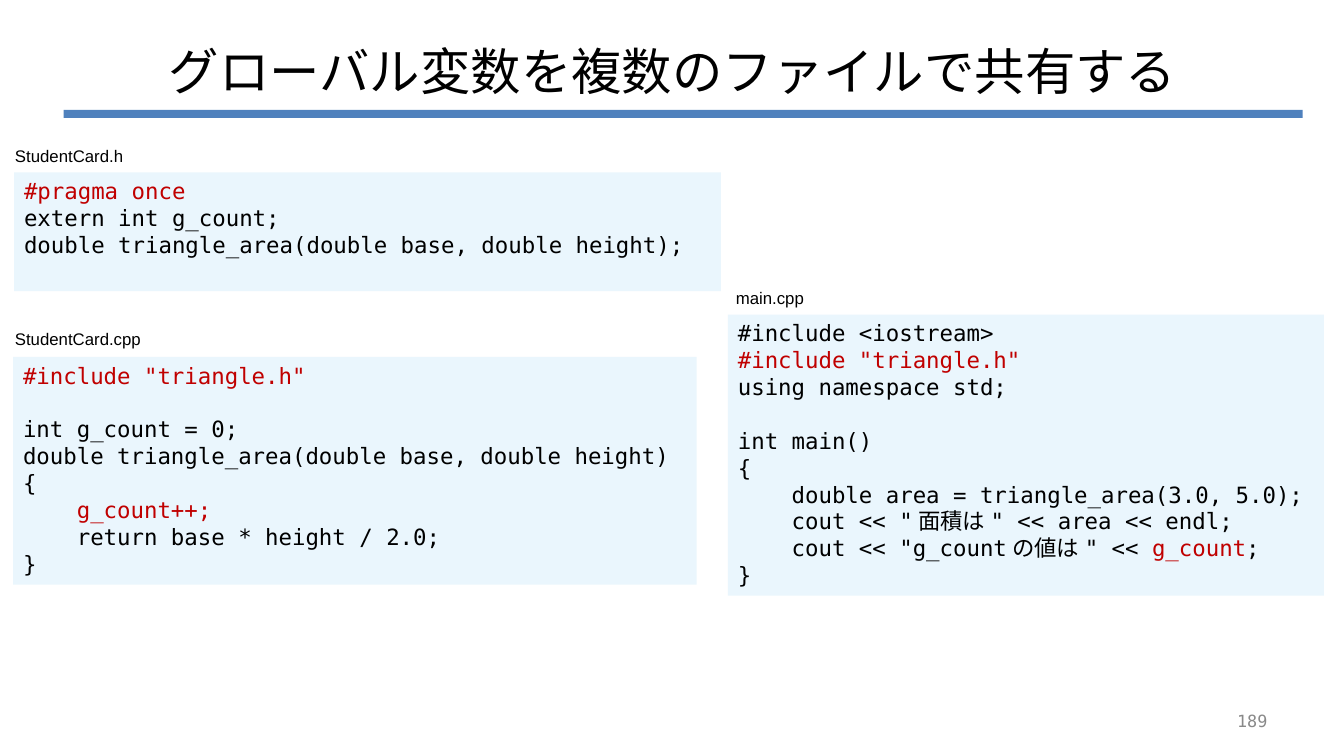
from dataclasses import dataclass

from pptx import Presentation
from pptx.dml.color import RGBColor
from pptx.enum.shapes import MSO_SHAPE as Preset
from pptx.enum.text import MSO_ANCHOR as Anchor, MSO_AUTO_SIZE as AutoSize, PP_ALIGN as Align
from pptx.shapes.autoshape import Shape
from pptx.slide import Slide
from pptx.text.text import TextFrame
from pptx.util import Emu, Pt

EMU_PER_PX = 9144
BLACK, RED, GRAY = "000000", "C00000", "898989"
RULE_BLUE, CODE_BLUE = "4F81BD", "EAF6FD"
SANS, MONO = "Arial", "DejaVu Sans Mono"
RED_MARK = "|"


@dataclass(frozen=True)
class Box:
    left: int
    top: int
    width: int
    height: int


@dataclass(frozen=True)
class Label:
    text: str
    box: Box


@dataclass(frozen=True)
class Listing:
    box: Box
    code: str


@dataclass(frozen=True)
class TextStyle:
    font: str
    size: int
    color: str = BLACK
    align: Align = Align.LEFT
    anchor: Anchor = Anchor.TOP
    wrap: bool = True


TITLE_STYLE = TextStyle(SANS, 36, align=Align.CENTER, anchor=Anchor.MIDDLE)
NUMBER_STYLE = TextStyle(MONO, 12, GRAY, Align.RIGHT, Anchor.MIDDLE)
LABEL_STYLE = TextStyle(SANS, 12, wrap=False)
CODE_STYLE = TextStyle(MONO, 16)

TITLE = Label("グローバル変数を複数のファイルで共有する", Box(67, 30, 1200, 79))
RULE = Box(63, 109, 1229, 8)
PAGE_NUMBER = Label("189", Box(956, 695, 311, 40))

FILE_NAMES = [
    Label("StudentCard.h", Box(5, 140, 128, 30)),
    Label("StudentCard.cpp", Box(5, 321, 146, 30)),
    Label("main.cpp", Box(720, 281, 88, 30)),
]

LISTINGS = [
    Listing(Box(722, 312, 591, 279), """#include <iostream>
|#include "triangle.h"|
using namespace std;

int main()
{
    double area = triangle_area(3.0, 5.0);
    cout << "面積は" << area << endl;
    cout << "g_countの値は" << |g_count|;
}"""),
    Listing(Box(13, 354, 678, 226), """|#include "triangle.h"|

int g_count = 0;
double triangle_area(double base, double height)
{
    |g_count++;|
    return base * height / 2.0;
}"""),
    Listing(Box(14, 171, 701, 118), """|#pragma once|
extern int g_count;
double triangle_area(double base, double height);"""),
]


def px(length: int) -> Emu:
    return Emu(length * EMU_PER_PX)


def rgb(color: str) -> RGBColor:
    return RGBColor.from_string(color)


def bounds(box: Box) -> tuple[Emu, Emu, Emu, Emu]:
    return px(box.left), px(box.top), px(box.width), px(box.height)


def apply_format(target: object, values: dict) -> None:
    for name, value in values.items():
        setattr(target, name, value)


def write_text(frame: TextFrame, text: str, style: TextStyle) -> None:
    apply_format(frame, {
        "auto_size": AutoSize.NONE,
        "word_wrap": style.wrap,
        "vertical_anchor": style.anchor,
    })
    for index, line in enumerate(text.split("\n")):
        paragraph = frame.add_paragraph() if index else frame.paragraphs[0]
        paragraph.alignment = style.align
        font_format = {"name": style.font, "size": Pt(style.size)}
        apply_format(paragraph.font, font_format)
        for position, part in enumerate(line.split(RED_MARK)):
            if part:
                run = paragraph.add_run()
                run.text = part
                apply_format(run.font, font_format)
                run.font.color.rgb = rgb(RED if position % 2 else style.color)


def add_rectangle(slide: Slide, box: Box, color: str) -> Shape:
    shape = slide.shapes.add_shape(Preset.RECTANGLE, *bounds(box))
    shape.shadow.inherit = False
    shape.fill.solid()
    shape.fill.fore_color.rgb = rgb(color)
    shape.line.fill.background()
    return shape


def add_label(slide: Slide, label: Label, style: TextStyle) -> None:
    shape = slide.shapes.add_textbox(*bounds(label.box))
    write_text(shape.text_frame, label.text, style)


def set_title(slide: Slide, label: Label) -> None:
    title = slide.shapes.title
    apply_format(title, dict(zip(("left", "top", "width", "height"), bounds(label.box))))
    write_text(title.text_frame, label.text, TITLE_STYLE)


def main() -> None:
    presentation = Presentation()
    apply_format(presentation, {"slide_width": px(1333), "slide_height": px(750)})
    slide = presentation.slides.add_slide(presentation.slide_layouts.get_by_name("Title Only"))
    set_title(slide, TITLE)
    add_rectangle(slide, RULE, RULE_BLUE)
    add_label(slide, PAGE_NUMBER, NUMBER_STYLE)
    for listing in LISTINGS:
        shape = add_rectangle(slide, listing.box, CODE_BLUE)
        write_text(shape.text_frame, listing.code, CODE_STYLE)
    for file_name in FILE_NAMES:
        add_label(slide, file_name, LABEL_STYLE)
    presentation.save("out.pptx")


if __name__ == "__main__":
    main()
